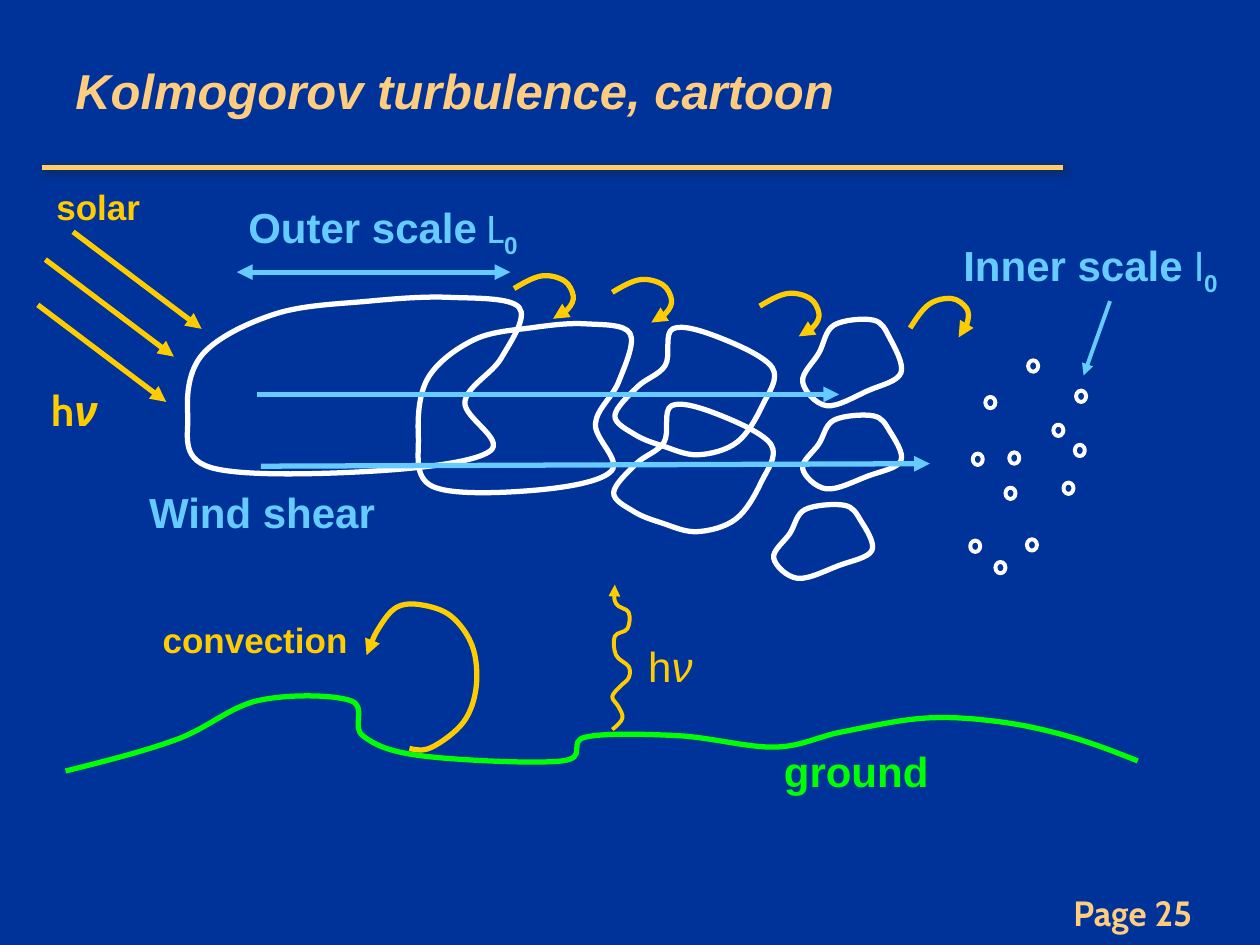
from lxml.etree import SubElement
from pptx import Presentation
from pptx.dml.color import RGBColor
from pptx.enum.shapes import MSO_CONNECTOR, MSO_SHAPE
from pptx.enum.text import MSO_ANCHOR, MSO_AUTO_SIZE, PP_ALIGN
from pptx.oxml.ns import qn
from pptx.util import Inches, Pt

NAVY = RGBColor(0x00, 0x33, 0x99)
PEACH = RGBColor(0xFF, 0xCD, 0x7F)
RULE = RGBColor(0xFF, 0xCC, 0x66)
GOLD = RGBColor(0xFF, 0xCC, 0x00)
SKY = RGBColor(0x66, 0xCC, 0xFF)
GREEN = RGBColor(0x00, 0xFF, 0x00)
WHITE = RGBColor(0xFF, 0xFF, 0xFF)

# Outlines: points that a smooth curve passes through, fitted to a box when drawn
LARGE_EDDY = [(2.19, 2.49), (1.61, 2.81), (1.49, 3.29), (1.67, 3.71),
              (2.95, 3.74), (3.89, 3.58), (3.69, 3.19), (3.98, 2.84),
              (4.12, 2.44), (3.57, 2.36), (2.93, 2.39)]
MEDIUM_EDDY = [(5.54, 3.61), (5.85, 3.51), (6.05, 3.22), (6.13, 2.92),
               (5.71, 2.68), (5.34, 2.61), (5.28, 2.9), (5.06, 3.07),
               (4.88, 3.3), (5.04, 3.45), (5.26, 3.54)]
SMALL_EDDY = [(6.5, 2.8), (6.62, 2.58), (6.93, 2.54), (7.06, 2.68),
              (7.15, 2.96), (6.89, 3.1), (6.56, 3.22), (6.37, 3.03)]
CASCADE_ARC = [(4.08, 2.29), (4.3, 2.19), (4.48, 2.23), (4.55, 2.35),
               (4.51, 2.45), (4.39, 2.53)]
GROUND = [(0.52, 6.12), (1.4, 5.87), (2.05, 5.56), (2.78, 5.56), (2.88, 5.84),
          (3.35, 6), (4.46, 6.04), (4.65, 5.85), (5.39, 5.84), (6.15, 5.93),
          (6.68, 5.81), (7.34, 5.7), (7.94, 5.73), (8.5, 5.85), (9.03, 6.04)]
PHOTON = [(4.86, 5.79), (4.94, 5.7), (4.91, 5.61), (4.86, 5.53), (4.92, 5.45),
          (4.99, 5.38), (4.99, 5.29), (4.89, 5.2), (4.88, 5.05), (4.98, 4.99),
          (4.99, 4.86), (4.89, 4.79), (4.88, 4.64)]
CONVECTION = [(3.25, 5.94), (3.43, 5.93), (3.68, 5.73), (3.78, 5.45),
              (3.75, 5.13), (3.58, 4.89), (3.34, 4.8), (3.15, 4.82),
              (3.01, 4.98), (2.91, 5.2)]


def style_line(sp, color, width, head=False, tail=False):
    sp.line.color.rgb = color
    sp.line.width = Pt(width)
    ln = sp.line._get_or_add_ln()
    for wanted, tag in ((head, "a:headEnd"), (tail, "a:tailEnd")):
        if wanted:
            SubElement(ln, qn(tag), type="triangle")


def add_line(s, origin, start, end, color, width=3, head=False, tail=False):
    """Draw a straight line relative to origin and return its effect list."""
    ends = [Inches(o + d) for p in (start, end) for o, d in zip(origin, p)]
    line = s.shapes.add_connector(MSO_CONNECTOR.STRAIGHT, *ends)
    style_line(line, color, width, head, tail)
    return SubElement(line._element.spPr, qn("a:effectLst"))


def add_label(s, origin, box, runs, color, size, align=PP_ALIGN.CENTER, wrap=False):
    """Add one line of text; runs are (text, font, bold, italic, subscript)."""
    x, y, w, h = box
    sp = s.shapes.add_textbox(Inches(origin[0] + x), Inches(origin[1] + y),
                              Inches(w), Inches(h))
    tf = sp.text_frame
    tf.word_wrap = wrap
    tf.vertical_anchor = MSO_ANCHOR.MIDDLE
    tf.auto_size = MSO_AUTO_SIZE.NONE if wrap else MSO_AUTO_SIZE.SHAPE_TO_FIT_TEXT
    p = tf.paragraphs[0]
    p.alignment = align
    for text, font, bold, italic, subscript in runs:
        r = p.add_run()
        r.text = text
        r.font.name, r.font.size = font, Pt(size)
        r.font.bold, r.font.italic = bold, italic
        r.font.color.rgb = color
        if subscript:
            r.font._element.set("baseline", "-25000")
    return tf


def bold(text, font="Arial"):
    return (text, font, True, False, False)


def scale_name(name, symbol):
    return [bold(name), (symbol, "Calibri", False, False, False),
            ("0", "Arial", True, False, True)]


def photon_name(font, is_bold):
    return [("h", font, is_bold, False, False), ("ν", font, is_bold, True, False)]


def smooth(sp, closed):
    """Turn the straight segments of a freeform into a Catmull-Rom curve."""
    pts = [(int(pt.get("x")), int(pt.get("y"))) for pt in sp._element.iter(qn("a:pt"))]
    last = len(pts) - 1

    def control(i, sign):
        before = pts[i - 1] if i else pts[-2]
        after = pts[i + 1] if i < last else pts[1]
        return tuple(c + sign * (a - b) / 6 for c, a, b in zip(pts[i], after, before))

    def halfway(a, b):
        return tuple((m + n) / 2 for m, n in zip(a, b))

    for i, seg in enumerate(list(sp._element.iter(qn("a:lnTo")))):
        c1, c2 = control(i, 1), control(i + 1, -1)
        if not closed and i == 0:
            c1 = halfway(pts[0], c2)
        if not closed and i + 1 == last:
            c2 = halfway(c1, pts[last])
        seg.clear()
        curve = SubElement(seg.getparent(), qn("a:cubicBezTo"))
        for x, y in (c1, c2, pts[i + 1]):
            SubElement(curve, qn("a:pt"), x=str(round(x)), y=str(round(y)))
        seg.getparent().replace(seg, curve)


def add_curve(s, origin, outline, box, color, width=3, closed=False, tail=False):
    """Draw an outline as a smooth curve whose points fill the box."""
    def fit(values, start, size):
        low, span = min(values), max(values) - min(values)
        return [Inches(start + (v - low) * size / span) for v in values]

    xs, ys = zip(*outline)
    pts = list(zip(fit(xs, origin[0] + box[0], box[2]),
                   fit(ys, origin[1] + box[1], box[3])))
    builder = s.shapes.build_freeform(*pts[0])
    builder.add_line_segments(pts[1:] + pts[:1] if closed else pts[1:], close=closed)
    sp = builder.convert_to_shape()
    smooth(sp, closed)
    sp.fill.background()
    sp.shadow.inherit = False
    style_line(sp, color, width, tail=tail)
    return sp


def add_header(s, origin):
    effects = add_line(s, origin, (0, 1.33), (8.11, 1.33), RULE)
    shadow = SubElement(effects, qn("a:outerShdw"), blurRad=str(Pt(5)),
                        dist=str(Pt(1.4)), dir="2700000")
    color = SubElement(shadow, qn("a:srgbClr"), val="232323")
    SubElement(color, qn("a:alpha"), val="75000")
    title = [("Kolmogorov turbulence, cartoon", "Arial", True, True, False)]
    add_label(s, origin, (0.17, 0, 7.83, 1.42), title, PEACH, 28, PP_ALIGN.LEFT, True)


def add_cascade(s, origin):
    for outline, boxes in (
            (LARGE_EDDY, [(0.49, 0.86, 2.63, 1.38), (2.32, 1.07, 1.68, 1.32)]),
            (MEDIUM_EDDY, [(3.88, 1.11, 1.25, 1), (3.87, 1.72, 1.25, 1)]),
            (SMALL_EDDY, [(5.37, 1.04, 0.78, 0.68), (5.37, 1.8, 0.78, 0.58),
                          (5.14, 2.51, 0.78, 0.58)])):
        for box in boxes:
            add_curve(s, origin, outline, box, WHITE, closed=True)
    for x, y, angle in ((3.08, 0.69, 0), (3.86, 0.72, 0), (5.03, 0.83, 0),
                        (6.23, 0.89, 333.1)):
        arc = add_curve(s, origin, CASCADE_ARC, (x, y, 0.47, 0.34), GOLD, tail=True)
        arc.rotation = angle
    add_line(s, origin, (0.88, 0.66), (3.05, 0.66), SKY, head=True, tail=True)
    add_label(s, origin, (0.83, 0.08, 2.42, 0.5), scale_name("Outer scale", " L"), SKY, 24)
    add_line(s, origin, (1.04, 1.63), (5.66, 1.63), SKY, tail=True)
    add_line(s, origin, (1.07, 2.2), (6.38, 2.18), SKY, tail=True)
    add_label(s, origin, (0.08, 2.31, 2, 0.5), [bold("Wind shear")], SKY, 24)


def add_inner_scale(s, origin):
    for x, y in ((0.32, 1.3), (0.66, 1.01), (0.22, 1.75), (0.86, 1.52),
                 (1.03, 1.68), (0.94, 1.98), (1.04, 1.25), (0.48, 2.02),
                 (0.2, 2.44), (0.65, 2.43), (0.4, 2.61), (0.51, 1.74)):
        eddy = s.shapes.add_shape(MSO_SHAPE.OVAL, Inches(origin[0] + x),
                                  Inches(origin[1] + y), Inches(0.08), Inches(0.09))
        eddy.fill.background()
        eddy.shadow.inherit = False
        style_line(eddy, WHITE, 2.25)
    add_label(s, origin, (0.04, 0.03, 2.23, 0.5), scale_name("Inner scale ", "l"), SKY, 24)
    add_line(s, origin, (1.31, 0.54), (1.1, 1.13), SKY, 2.25, tail=True)


def add_ground(s, origin):
    add_curve(s, origin, GROUND, (0.02, 0.96, 8.51, 0.56), GREEN)
    add_label(s, origin, (5.62, 1.27, 1.35, 0.5), [bold("ground")], GREEN, 24)
    add_curve(s, origin, PHOTON, (4.36, 0.04, 0.13, 1.15), GOLD, 2.25, tail=True)
    add_label(s, origin, (4.51, 0.43, 0.62, 0.51), photon_name("Arial", False), GOLD, 24)
    add_curve(s, origin, CONVECTION, (2.41, 0.2, 0.87, 1.14), GOLD, tail=True)
    add_label(s, origin, (0.69, 0.26, 1.67, 0.43), [bold("convection")], GOLD, 20)


def add_sunlight(s, origin):
    for x, y in ((0.05, 1.02), (0.33, 0.44), (0.11, 0.66)):
        add_line(s, origin, (x, y), (x + 1.02, y + 0.77), GOLD, tail=True)
    add_label(s, origin, (0.03, 0.02, 1, 0.43), [bold("solar")], GOLD, 20)
    add_label(s, origin, (0.02, 1.6, 0.64, 0.51), photon_name("Cabin", True), GOLD, 24)


def add_page_number(s, origin):
    tf = add_label(s, origin, (0, 0, 2.59, 0.43), [bold("Page 25", "Cabin")],
                   PEACH, 20, PP_ALIGN.RIGHT, True)
    tf.margin_right = Inches(0.35)


def main():
    prs = Presentation()
    prs.slide_width, prs.slide_height = Inches(10), Inches(7.5)
    s = prs.slides.add_slide(prs.slide_layouts[6])
    s.background.fill.solid()
    s.background.fill.fore_color.rgb = NAVY
    add_header(s, (0.33, 0))
    add_page_number(s, (7.22, 7.03))
    add_ground(s, (0.5, 4.6))
    add_cascade(s, (1, 1.5))
    add_inner_scale(s, (7.5, 1.85))
    add_sunlight(s, (0.25, 1.4))
    prs.save("out.pptx")


if __name__ == "__main__":
    main()
